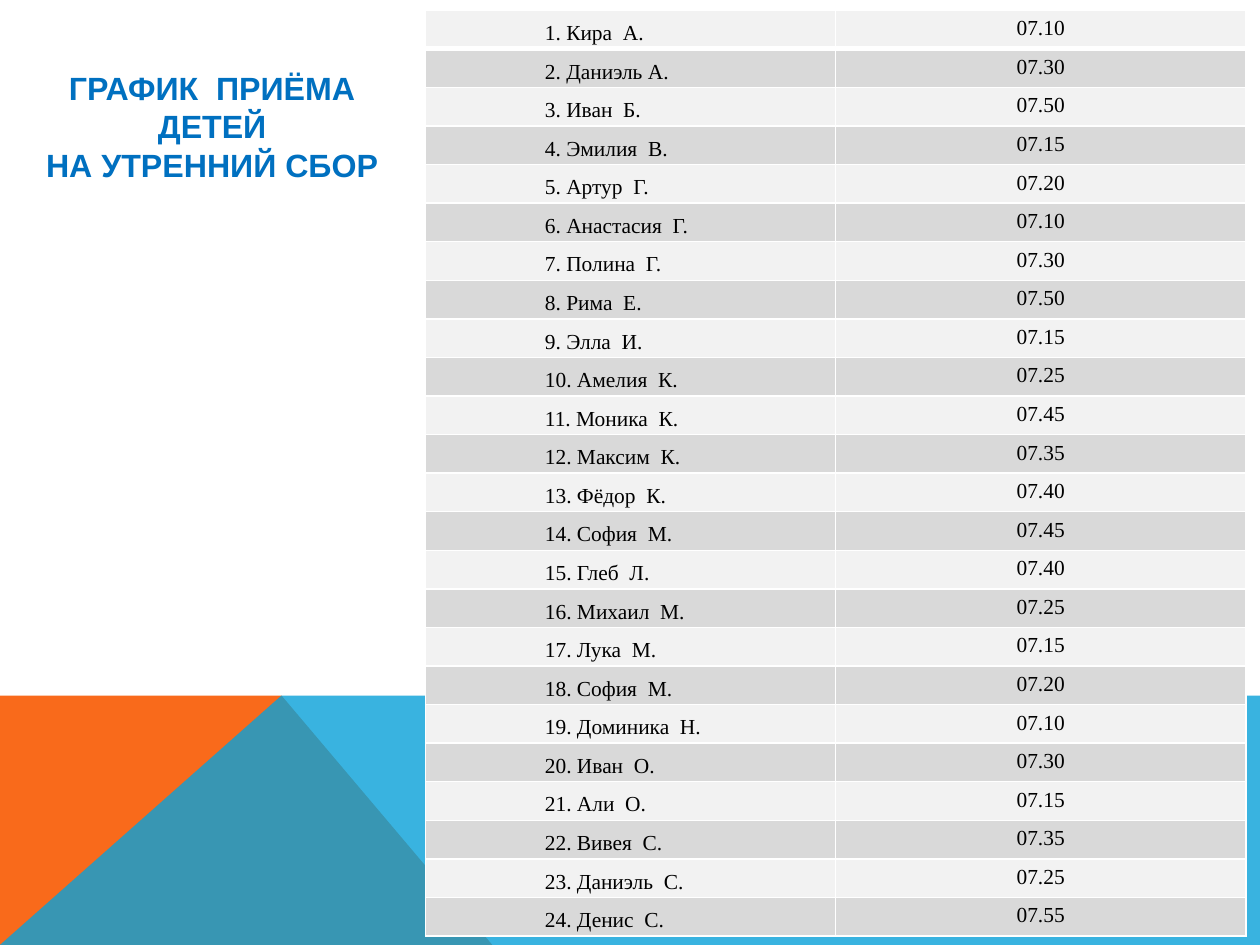
"""Build the slide with the morning arrival schedule of a children's group."""
import dataclasses
import typing

import lxml.etree
import pptx
import pptx.dml.color
import pptx.enum.text
import pptx.oxml.ns
import pptx.util

Inches = pptx.util.Inches
Pt = pptx.util.Pt
ALIGN = pptx.enum.text.PP_ALIGN

COLORS = {
    "orange": "F96A1B",
    "blue": "08A1D9",
    "title": "0070C0",
    "text": "000000",
    "light": "F2F2F2",
    "dark": "D9D9D9",
    "white": "FFFFFF",
}
ROW_HEIGHT = 0.3
COLUMN_WIDTH = 3.19


@dataclasses.dataclass(frozen=True)
class Band:
    points: tuple[tuple[float, float], ...]
    color: str
    opacity: int = 100


@dataclasses.dataclass(frozen=True)
class Child:
    name: str
    time: str


BANDS = (
    Band(((0, 7.35), (0, 5.41), (2.19, 5.41), (3.83, 7.35)), "orange"),
    Band(((0, 7.35), (2.19, 5.41), (9.8, 5.41), (9.8, 7.35)), "blue", 80),
)
TITLE = ("ГРАФИК  ПРИЁМА ", "ДЕТЕЙ ", "НА УТРЕННИЙ СБОР ")
CHILDREN = (
    Child("Кира  А.", "07.10"),
    Child("Даниэль А.", "07.30"),
    Child("Иван  Б.", "07.50"),
    Child("Эмилия  В.", "07.15"),
    Child("Артур  Г.", "07.20"),
    Child("Анастасия  Г.", "07.10"),
    Child("Полина  Г.", "07.30"),
    Child("Рима  Е.", "07.50"),
    Child("Элла  И.", "07.15"),
    Child("Амелия  К.", "07.25"),
    Child("Моника  К.", "07.45"),
    Child("Максим  К.", "07.35"),
    Child("Фёдор  К.", "07.40"),
    Child("София  М.", "07.45"),
    Child("Глеб  Л.", "07.40"),
    Child("Михаил  М.", "07.25"),
    Child("Лука  М.", "07.15"),
    Child("София  М.", "07.20"),
    Child("Доминика  Н.", "07.10"),
    Child("Иван  О.", "07.30"),
    Child("Али  О.", "07.15"),
    Child("Вивея  С.", "07.35"),
    Child("Даниэль  С.", "07.25"),
    Child("Денис  С.", "07.55"),
)


def rgb(color: str) -> pptx.dml.color.RGBColor:
    return pptx.dml.color.RGBColor.from_string(COLORS[color])


def add_child(parent: typing.Any, tag: str, **attributes: str) -> typing.Any:
    return lxml.etree.SubElement(parent, pptx.oxml.ns.qn(tag), attributes)


def write_text(tf: typing.Any, lines: typing.Sequence[str], *, size: float = 12,
               font: str = "Times New Roman", color: str = "text", bold: bool = False,
               align: typing.Any = ALIGN.LEFT, spacing: typing.Any = None) -> None:
    tf.word_wrap = True
    for i, line in enumerate(lines):
        p = tf.add_paragraph() if i else tf.paragraphs[0]
        p.alignment = align
        p.line_spacing = spacing
        r = p.add_run()
        r.text = line
        r.font.size = Pt(size)
        r.font.name = font
        r.font.bold = bold
        r.font.color.rgb = rgb(color)


def draw_band(s: typing.Any, band: Band) -> None:
    start, *rest = [(Inches(x), Inches(y)) for x, y in band.points]
    builder = s.shapes.build_freeform(*start)
    builder.add_line_segments(rest, close=True)
    sp = builder.convert_to_shape()
    sp.shadow.inherit = False
    sp.line.fill.background()
    sp.fill.solid()
    sp.fill.fore_color.rgb = rgb(band.color)
    if band.opacity < 100:
        fill = sp._element.spPr.find(pptx.oxml.ns.qn("a:solidFill"))
        add_child(fill[0], "a:alpha", val=str(band.opacity * 1000))


def style_cell(cell: typing.Any, color: str, bottom: float) -> None:
    cell.margin_bottom = Inches(0.03)
    tc_pr = cell._tc.get_or_add_tcPr()
    for side, width in (("L", 1), ("R", 1), ("T", 1), ("B", bottom)):
        line = add_child(tc_pr, f"a:ln{side}", w=str(Pt(width)))
        add_child(add_child(line, "a:solidFill"), "a:srgbClr", val=COLORS["white"])
    cell.fill.solid()
    cell.fill.fore_color.rgb = rgb(color)


def draw_times(s: typing.Any, children: typing.Sequence[Child]) -> None:
    table = s.shapes.add_table(
        len(children), 2, Inches(3.31), Inches(0.08),
        Inches(2 * COLUMN_WIDTH), Inches(ROW_HEIGHT * len(children))).table
    for i, (row, child) in enumerate(zip(table.rows, children)):
        row.height = Inches(ROW_HEIGHT)
        for cell in row.cells:
            style_cell(cell, "dark" if i % 2 else "light", 1 if i else 3)
        empty, time = row.cells
        add_child(empty.text_frame.paragraphs[0]._p, "a:endParaRPr", sz="1200")
        write_text(time.text_frame, [child.time], align=ALIGN.CENTER)


def draw_text(s: typing.Any, box: tuple[float, float, float, float],
              lines: typing.Sequence[str], **style: typing.Any) -> None:
    sp = s.shapes.add_textbox(*map(Inches, box))
    write_text(sp.text_frame, lines, spacing=Pt(21.6), **style)


def main() -> None:
    prs = pptx.Presentation()
    prs.slide_width, prs.slide_height = Inches(9.8), Inches(7.35)
    s = prs.slides.add_slide(prs.slide_layouts[6])
    for band in BANDS:
        draw_band(s, band)
    draw_text(s, (-0.38, 0.48, 4.13, 0.43), TITLE, size=18, font="Arial",
              color="title", bold=True, align=ALIGN.CENTER)
    draw_times(s, CHILDREN)
    names = [f"{i}. {child.name}" for i, child in enumerate(CHILDREN, 1)]
    draw_text(s, (4.14, 0, 1.97, 7.54), names)
    prs.save("out.pptx")


if __name__ == "__main__":
    main()
